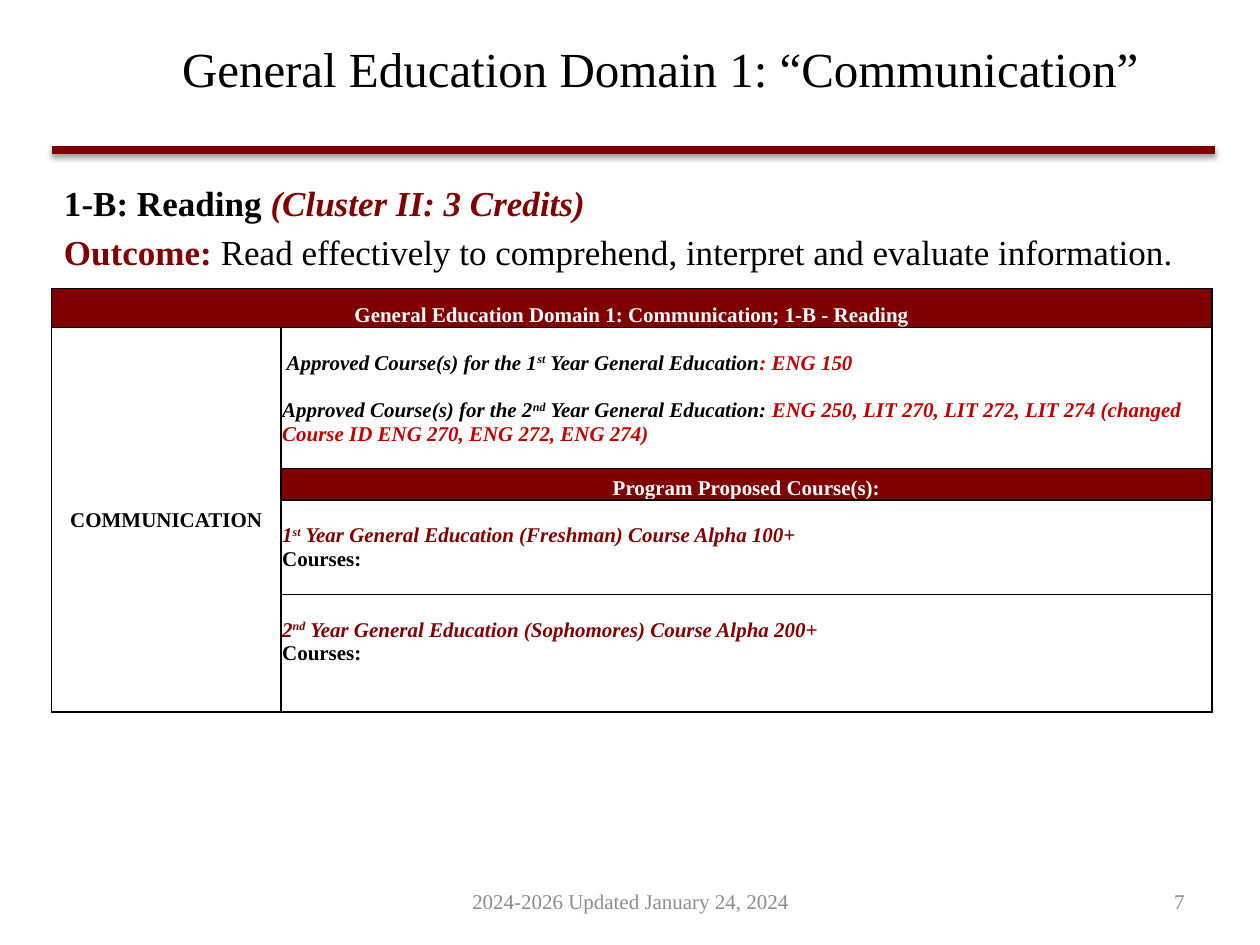
"""Build the General Education Domain 1 reading slide."""
from dataclasses import dataclass

from lxml import etree
from pptx import Presentation
from pptx.dml.color import RGBColor
from pptx.enum import shapes, text
from pptx.oxml import ns
from pptx.util import Inches, Pt


@dataclass(frozen=True)
class Theme:
    font: str = "Times New Roman"
    black: str = "000000"
    white: str = "FFFFFF"
    maroon: str = "800000"
    red: str = "C00000"
    grey: str = "8C8C8C"
    title: int = 28
    body: int = 20
    small: int = 12


T = Theme()
LEFT, MIDDLE, BOTTOM, TOP = "l", "m", "b", "t"
ALIGN = {"l": text.PP_ALIGN.LEFT, "c": text.PP_ALIGN.CENTER, "r": text.PP_ALIGN.RIGHT}
ANCHOR = {"t": text.MSO_ANCHOR.TOP, "m": text.MSO_ANCHOR.MIDDLE, "b": text.MSO_ANCHOR.BOTTOM}

# A run is (wording, colour, style); style letters: b bold, i italic, s superscript.
TITLE = [[("General Education Domain 1: “Communication”", T.black, "")]]
OUTCOME = [
    [("1-B: Reading ", T.black, "b"), ("(Cluster II: 3 Credits)", T.maroon, "bi")],
    [("Outcome: ", T.maroon, "b"),
     ("Read effectively to comprehend, interpret and evaluate information.", T.black, "")],
]
FOOTER = [[("2024-2026 Updated January 24, 2024", T.grey, "")]]
NUMBER = [[("7", T.grey, "")]]


def approved(lead, suffix, after, after_color, courses):
    return [(lead, T.black, "bi"), (suffix, T.black, "bis"),
            (" Year General Education", T.black, "bi"),
            (after, after_color, "bi"), (courses, T.red, "bi")]


def proposed(number, suffix, detail):
    return [[(number, T.maroon, "bi"), (suffix, T.maroon, "bis"),
             (f" Year General Education ({detail}", T.maroon, "bi")],
            [("Courses:", T.black, "b")]]


HEADER = [[("General Education Domain 1: Communication; 1-B - Reading", T.white, "b")]]
DOMAIN = [[("COMMUNICATION", T.black, "b")]]
APPROVED = [
    approved(" Approved Course(s) for the 1", "st", ": ", T.red, "ENG 150"),
    approved("Approved Course(s) for the 2", "nd", ": ", T.black,
             "ENG 250, LIT 270, LIT 272, LIT 274 (changed Course ID ENG 270, ENG 272, ENG 274)"),
]
PROPOSED = [[("Program Proposed Course(s):", T.white, "b")]]
FRESHMAN = proposed("1", "st", "Freshman) Course Alpha 100+")
SOPHOMORE = proposed("2", "nd", "Sophomores) Course Alpha 200+")

COLUMNS = (1.82, 7.39)
ROWS = (0.31, 1.12, 0.25, 0.75, 0.93)
# row, column, paragraphs, fill, alignment, anchor, top inset, gap between paragraphs
CELLS = [
    (0, 0, HEADER, T.maroon, "c", BOTTOM, 0.01, 0),
    (1, 0, DOMAIN, T.white, "c", MIDDLE, 0.01, 0),
    (1, 1, APPROVED, T.white, LEFT, TOP, 0.19, 13.8),
    (2, 1, PROPOSED, T.maroon, "c", BOTTOM, 0.01, 0),
    (3, 1, FRESHMAN, T.white, LEFT, TOP, 0.19, 0),
    (4, 1, SOPHOMORE, T.white, LEFT, TOP, 0.19, 0),
]
# left, top, width, height, paragraphs, size, alignment, anchor, gap, left inset
BOXES = [
    (0.5, 0.06, 9, 0.96, TITLE, T.title, "c", MIDDLE, 0, 0.58),
    (0.41, 1.39, 9.2, 0.85, OUTCOME, T.body, LEFT, TOP, 4, 0.1),
    (3.42, 6.95, 3.17, 0.4, FOOTER, T.small, "c", MIDDLE, 0, 0.1),
    (7.17, 6.95, 2.33, 0.4, NUMBER, T.small, "r", MIDDLE, 0, 0.1),
]


def write(tf, paragraphs, size, align, gap):
    for i, runs in enumerate(paragraphs):
        p = tf.add_paragraph() if i else tf.paragraphs[0]
        p.alignment = ALIGN[align]
        if i and gap:
            p.space_before = Pt(gap)
        for wording, color, style in runs:
            r = p.add_run()
            r.text = wording
            r.font.name, r.font.size = T.font, Pt(size)
            r.font.bold, r.font.italic = "b" in style, "i" in style
            r.font.color.rgb = RGBColor.from_string(color)
            if "s" in style:
                r.font._element.set("baseline", "30000")


def add_box(slide, left, top, width, height, paragraphs, size, align, anchor, gap, inset):
    sp = slide.shapes.add_textbox(*map(Inches, (left, top, width, height)))
    tf = sp.text_frame
    tf.word_wrap = True
    tf.margin_left = Inches(inset)
    tf.vertical_anchor = ANCHOR[anchor]
    write(tf, paragraphs, size, align, gap)


def add_rule(slide):
    y = Inches(1.19)
    line = slide.shapes.add_connector(
        shapes.MSO_CONNECTOR.STRAIGHT, Inches(0.41), y, Inches(9.64), y)
    line.line.color.rgb = RGBColor.from_string(T.maroon)
    line.line.width = Pt(4.5)
    effects = etree.SubElement(line._element.spPr, ns.qn("a:effectLst"))
    shadow = etree.SubElement(effects, ns.qn("a:outerShdw"), blurRad=str(Pt(3.1)),
                              dist=str(Pt(1.6)), dir="5400000", rotWithShape="0")
    color = etree.SubElement(shadow, ns.qn("a:srgbClr"), val=T.black)
    etree.SubElement(color, ns.qn("a:alpha"), val="38000")


def add_borders(cell):
    tc_pr = cell._tc.get_or_add_tcPr()
    for i, side in enumerate(("lnL", "lnR", "lnT", "lnB")):
        ln = etree.Element(ns.qn(f"a:{side}"), w=str(Pt(1)))
        fill = etree.SubElement(ln, ns.qn("a:solidFill"))
        etree.SubElement(fill, ns.qn("a:srgbClr"), val=T.black)
        tc_pr.insert(i, ln)


def add_course_table(slide):
    frame = slide.shapes.add_table(len(ROWS), len(COLUMNS), Inches(0.41), Inches(2.29),
                                   Inches(sum(COLUMNS)), Inches(sum(ROWS)))
    table = frame.table
    for column, width in zip(table.columns, COLUMNS):
        column.width = Inches(width)
    for row, height in zip(table.rows, ROWS):
        row.height = Inches(height)
    table.cell(0, 0).merge(table.cell(0, 1))
    table.cell(1, 0).merge(table.cell(4, 0))
    for cell in table.iter_cells():
        cell.fill.background()
        add_borders(cell)
    for row, col, paragraphs, fill, align, anchor, inset, gap in CELLS:
        cell = table.cell(row, col)
        cell.fill.solid()
        cell.fill.fore_color.rgb = RGBColor.from_string(fill)
        cell.margin_left = cell.margin_right = Inches(0.01)
        cell.margin_top, cell.margin_bottom = Inches(inset), 0
        cell.vertical_anchor = ANCHOR[anchor]
        write(cell.text_frame, paragraphs, T.small, align, gap)


def main():
    prs = Presentation()
    prs.slide_width, prs.slide_height = Inches(10), Inches(7.5)
    slide = prs.slides.add_slide(prs.slide_layouts[6])
    add_rule(slide)
    add_course_table(slide)
    for box in BOXES:
        add_box(slide, *box)
    prs.save("out.pptx")


if __name__ == "__main__":
    main()
